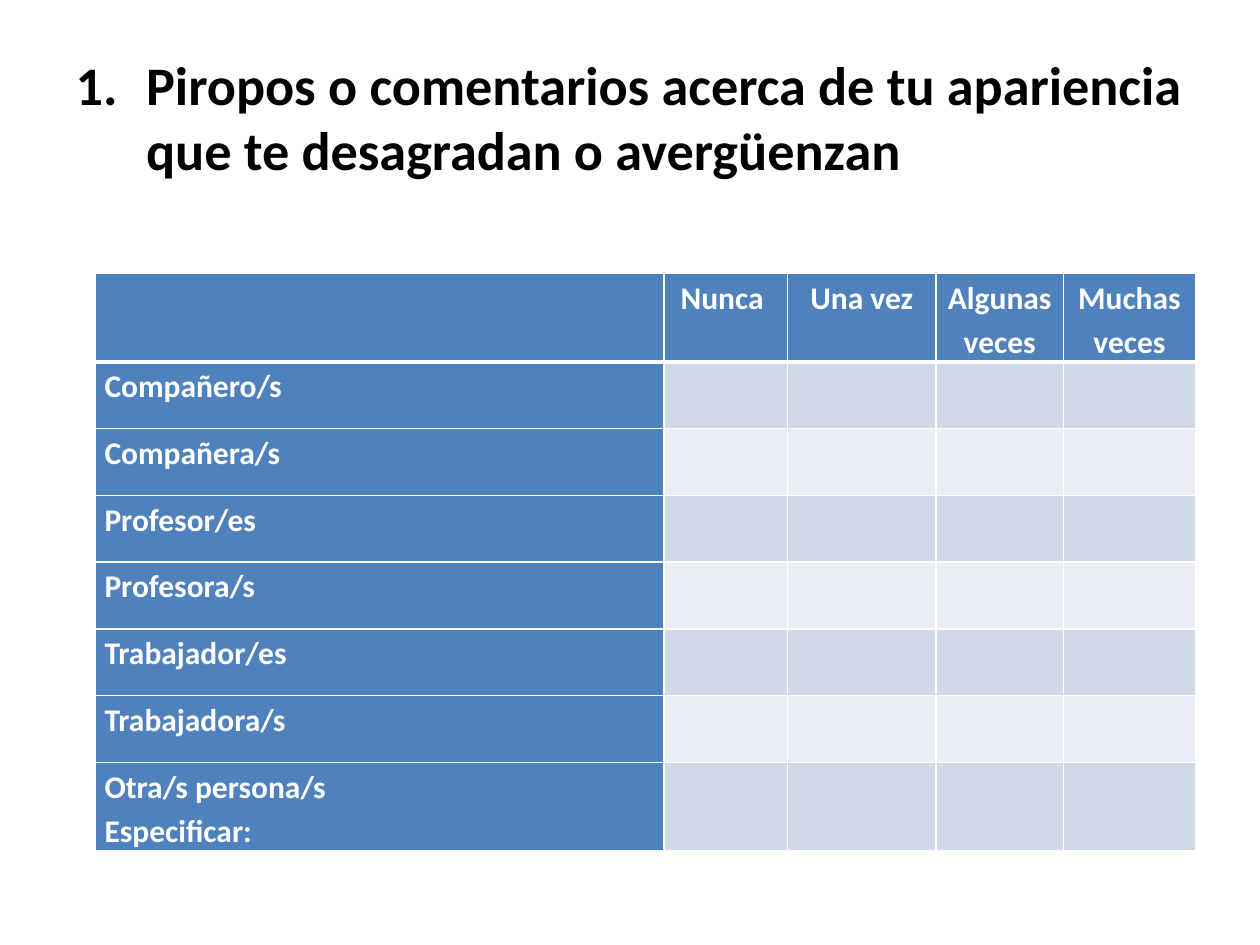
import pptx
import pptx.dml.color
import pptx.enum.text
import pptx.oxml.ns
import pptx.util
from lxml import etree

Inches, Pt = pptx.util.Inches, pptx.util.Pt
ALIGN = pptx.enum.text.PP_ALIGN
ANCHOR = pptx.enum.text.MSO_ANCHOR

# Content
TITLE = "Piropos o comentarios acerca de tu apariencia que te desagradan o avergüenzan"
FREQUENCIES = ["", "Nunca ", "Una vez", "Algunas veces", "Muchas veces"]
PEOPLE = ["Compañero/s", "Compañera/s", "Profesor/es", "Profesora/s",
          "Trabajador/es", "Trabajadora/s", "Otra/s persona/s\nEspecificar:"]

# Layout and formats
TITLE_BOX = dict(left=0.5, top=0.3, width=9, height=1.25)
TABLE_LEFT, TABLE_TOP = 0.76, 2.17
COLUMN_WIDTHS = [4.51, 0.98, 1.18, 1.01, 1.05]
HEADER_HEIGHT, ROW_HEIGHT = 0.47, 0.53
CELL_MARGINS = dict(margin_left=0.07, margin_right=0.07, margin_top=0, margin_bottom=0)
HEADING_FILL, BANDS = "4F81BD", ["D0D8E8", "E9EDF4"]
WHITE, BLACK = "FFFFFF", "000000"
FONT = dict(name="Calibri", bold=True)


def color(value):
    return pptx.dml.color.RGBColor.from_string(value)


def apply(target, formats):
    for name, value in formats.items():
        setattr(target, name, value)


def format_font(font, size, value):
    apply(font, dict(FONT, size=Pt(size)))
    font.color.rgb = color(value)


def add_element(parent, tag, **attributes):
    return etree.SubElement(parent, pptx.oxml.ns.qn(tag), attributes)


def add_borders(cell, bottom):
    properties = cell._tc.get_or_add_tcPr()
    for side, points in zip("LRTB", (1, 1, 1, bottom)):
        line = add_element(properties, "a:ln" + side, w=str(Pt(points)))
        add_element(add_element(line, "a:solidFill"), "a:srgbClr", val=WHITE)


def fill_cell(cell, text, fill, alignment, bottom):
    apply(cell, {name: Inches(value) for name, value in CELL_MARGINS.items()})
    add_borders(cell, bottom)
    cell.fill.solid()
    cell.fill.fore_color.rgb = color(fill)
    if not text:
        return
    cell.text = text
    for para in cell.text_frame.paragraphs:
        apply(para, dict(alignment=alignment, line_spacing=1.15))
        format_font(para.runs[0].font, 18, WHITE)


deck = pptx.Presentation()
apply(deck, dict(slide_width=Inches(10), slide_height=Inches(7.5)))
page = deck.slides.add_slide(deck.slide_layouts[5])

# Numbered title
title = page.shapes.title
apply(title, {name: Inches(value) for name, value in TITLE_BOX.items()})
title.text = TITLE
apply(title.text_frame, dict(word_wrap=True, vertical_anchor=ANCHOR.MIDDLE,
                             auto_size=pptx.enum.text.MSO_AUTO_SIZE.NONE))
para = title.text_frame.paragraphs[0]
para.alignment = ALIGN.LEFT
format_font(para.runs[0].font, 31, BLACK)
numbering = para._p.get_or_add_pPr()
numbering.set("marL", str(Inches(0.56)))
numbering.set("indent", str(Inches(-0.56)))
add_element(numbering, "a:buFont", typeface="+mj-lt")
add_element(numbering, "a:buAutoNum", type="arabicPeriod")

# Answer table
rows = [FREQUENCIES] + [[person] + [""] * (len(FREQUENCIES) - 1) for person in PEOPLE]
heights = [HEADER_HEIGHT] + [ROW_HEIGHT] * len(PEOPLE)
table = page.shapes.add_table(
    len(rows), len(FREQUENCIES), Inches(TABLE_LEFT), Inches(TABLE_TOP),
    Inches(sum(COLUMN_WIDTHS)), Inches(sum(heights))).table
for column, width in zip(table.columns, COLUMN_WIDTHS):
    column.width = Inches(width)
for row, height in zip(table.rows, heights):
    row.height = Inches(height)
for r, texts in enumerate(rows):
    for c, text in enumerate(texts):
        heading = r == 0 or c == 0
        fill_cell(table.cell(r, c), text,
                  fill=HEADING_FILL if heading else BANDS[(r - 1) % 2],
                  alignment=ALIGN.LEFT if c == 0 else ALIGN.CENTER,
                  bottom=3 if r == 0 else 1)

deck.save("out.pptx")
